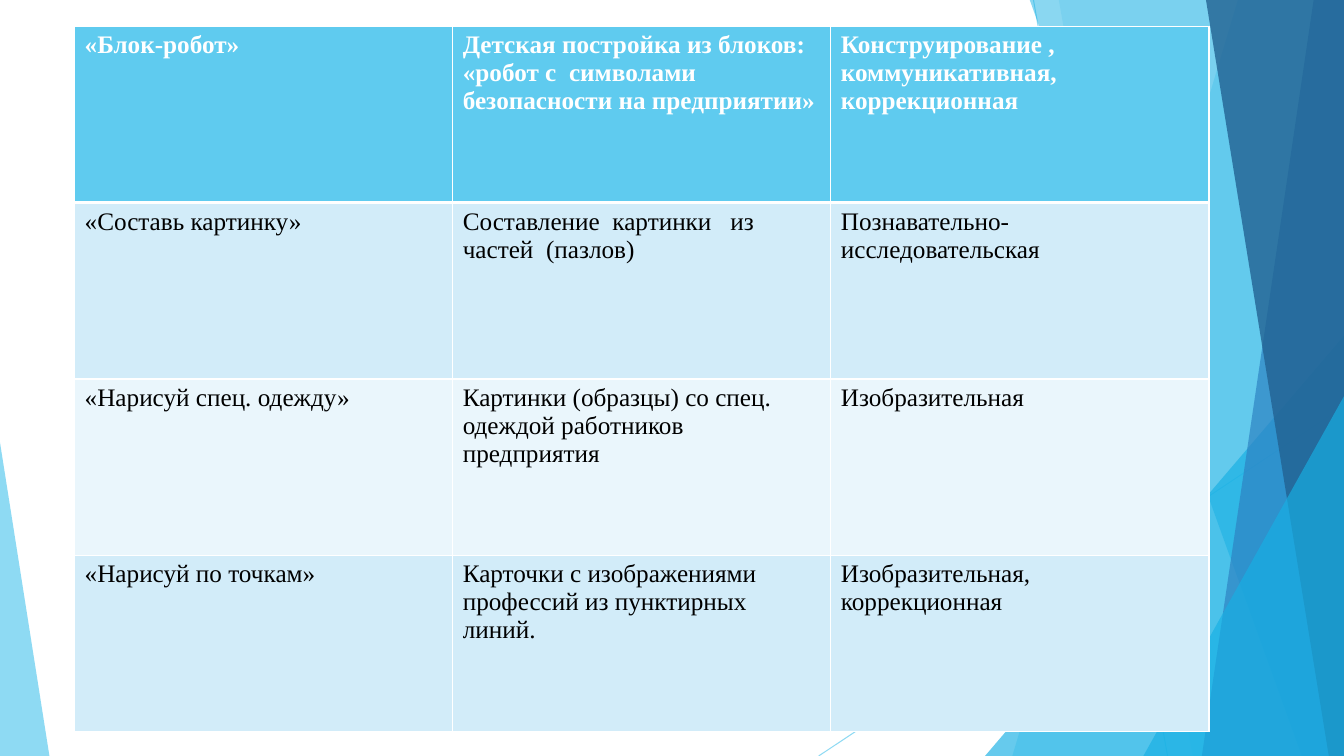
from lxml import etree
from pptx import Presentation
from pptx.dml.color import RGBColor
from pptx.enum.shapes import MSO_CONNECTOR, MSO_SHAPE
from pptx.oxml import parse_xml
from pptx.oxml.ns import nsdecls, qn
from pptx.util import Inches, Pt

SKY = RGBColor(0x5F, 0xCB, 0xEF)
CYAN = RGBColor(0x17, 0xB0, 0xE4)
BLUE = RGBColor(0x2E, 0x83, 0xC3)
NAVY = RGBColor(0x22, 0x62, 0x92)
PALE = RGBColor(0xD2, 0xEC, 0xF9)
PALEST = RGBColor(0xEA, 0xF6, 0xFC)
WHITE = RGBColor(0xFF, 0xFF, 0xFF)
BLACK = RGBColor(0, 0, 0)

WIDTH, HEIGHT = 13.33, 7.5
FONT = "Times New Roman"

ROWS = [
    ("«Блок-робот»",
     "Детская постройка из блоков: «робот с  символами безопасности на предприятии»",
     "Конструирование , коммуникативная, коррекционная"),
    ("«Составь картинку»",
     "Составление  картинки   из частей  (пазлов)",
     "Познавательно-исследовательская"),
    ("«Нарисуй спец. одежду»",
     "Картинки (образцы) со спец. одеждой работников предприятия",
     "Изобразительная"),
    ("«Нарисуй по точкам»",
     "Карточки с изображениями профессий из пунктирных линий.",
     "Изобразительная,\nкоррекционная"),
]
ROW_FILLS = [SKY, PALE, PALEST, PALE]
TABLE_LEFT, TABLE_TOP = 0.74, 0.26
COLUMN_WIDTH, ROW_HEIGHT = 3.75, 1.75

# Thin lines: start, end
RAYS = [((10.25, 0), (11.58, HEIGHT)), ((WIDTH, 4.03), (8.12, HEIGHT))]

# Bands reach the right edge: ("band", top x, bottom x, colour, opacity)
# Triangles stand on the bottom edge: ("triangle", left, top, width, apex, colour, opacity)
FACETS = [
    ("band", 12.28, 10.04, SKY, 36),
    ("band", 10.5, 11.83, SKY, 20),
    ("triangle", 9.77, 3.33, 3.56, 1, CYAN, 66),
    ("band", 10.21, 12.91, CYAN, 50),
    ("band", 13.03, 11.92, BLUE, 70),
    ("band", 11.96, 13.18, NAVY, 80),
    ("triangle", 11.34, 3.93, 1.99, 1, CYAN, 66),
    ("triangle", 0, 4.39, 0.49, 0, SKY, 70),
]


def set_opacity(shape, percent):
    color = next(shape._element.spPr.iter(qn("a:srgbClr")))
    etree.SubElement(color, qn("a:alpha"), val=str(percent * 1000))


def add_ray(page, start, end):
    x1, y1, x2, y2 = map(Inches, start + end)
    ray = page.shapes.add_connector(MSO_CONNECTOR.STRAIGHT, x1, y1, x2, y2)
    ray.line.color.rgb = SKY
    ray.line.width = Pt(0.75)
    set_opacity(ray, 70)
    etree.SubElement(ray._element.spPr, qn("a:effectLst"))


def add_band(page, top_x, bottom_x):
    corners = [(top_x, -0.01), (WIDTH, -0.01), (WIDTH, HEIGHT), (bottom_x, HEIGHT)]
    points = [(Inches(x), Inches(y)) for x, y in corners]
    builder = page.shapes.build_freeform(*points[0])
    builder.add_line_segments(points[1:], close=True)
    return builder.convert_to_shape()


def add_triangle(page, left, top, width, apex):
    shape = page.shapes.add_shape(
        MSO_SHAPE.ISOSCELES_TRIANGLE, Inches(left), Inches(top),
        Inches(width), Inches(HEIGHT - top))
    shape.adjustments[0] = apex
    return shape


def add_borders(cell, top, bottom):
    properties = cell._tc.get_or_add_tcPr()
    for side, points in (("L", 1), ("R", 1), ("T", top), ("B", bottom)):
        properties.append(parse_xml(
            f'<a:ln{side} {nsdecls("a")} w="{Pt(points)}"><a:solidFill>'
            f'<a:srgbClr val="{WHITE}"/></a:solidFill></a:ln{side}>'))


def add_activity_table(page):
    columns = len(ROWS[0])
    table = page.shapes.add_table(
        len(ROWS), columns, Inches(TABLE_LEFT), Inches(TABLE_TOP),
        Inches(COLUMN_WIDTH * columns), Inches(ROW_HEIGHT * len(ROWS))).table
    for column in table.columns:
        column.width = Inches(COLUMN_WIDTH)
    for index, (texts, fill) in enumerate(zip(ROWS, ROW_FILLS)):
        header = index == 0
        table.rows[index].height = Inches(ROW_HEIGHT)
        for cell, text in zip(table.rows[index].cells, texts):
            # The header is set off by a thicker rule
            add_borders(cell, 3 if index == 1 else 1, 3 if header else 1)
            cell.fill.solid()
            cell.fill.fore_color.rgb = fill
            cell.text = text
            for para in cell.text_frame.paragraphs:
                para.font.name = FONT
                para.font.size = Pt(18)
                para.font.bold = header
                para.font.color.rgb = WHITE if header else BLACK


def main():
    deck = Presentation()
    deck.slide_width, deck.slide_height = Inches(WIDTH), Inches(HEIGHT)
    page = deck.slides.add_slide(deck.slide_layouts[6])

    # Background facets
    for start, end in RAYS:
        add_ray(page, start, end)
    for kind, *geometry, color, opacity in FACETS:
        add_facet = add_band if kind == "band" else add_triangle
        shape = add_facet(page, *geometry)
        shape.shadow.inherit = False
        shape.fill.solid()
        shape.fill.fore_color.rgb = color
        set_opacity(shape, opacity)
        shape.line.fill.background()

    add_activity_table(page)
    deck.save("out.pptx")


if __name__ == "__main__":
    main()
